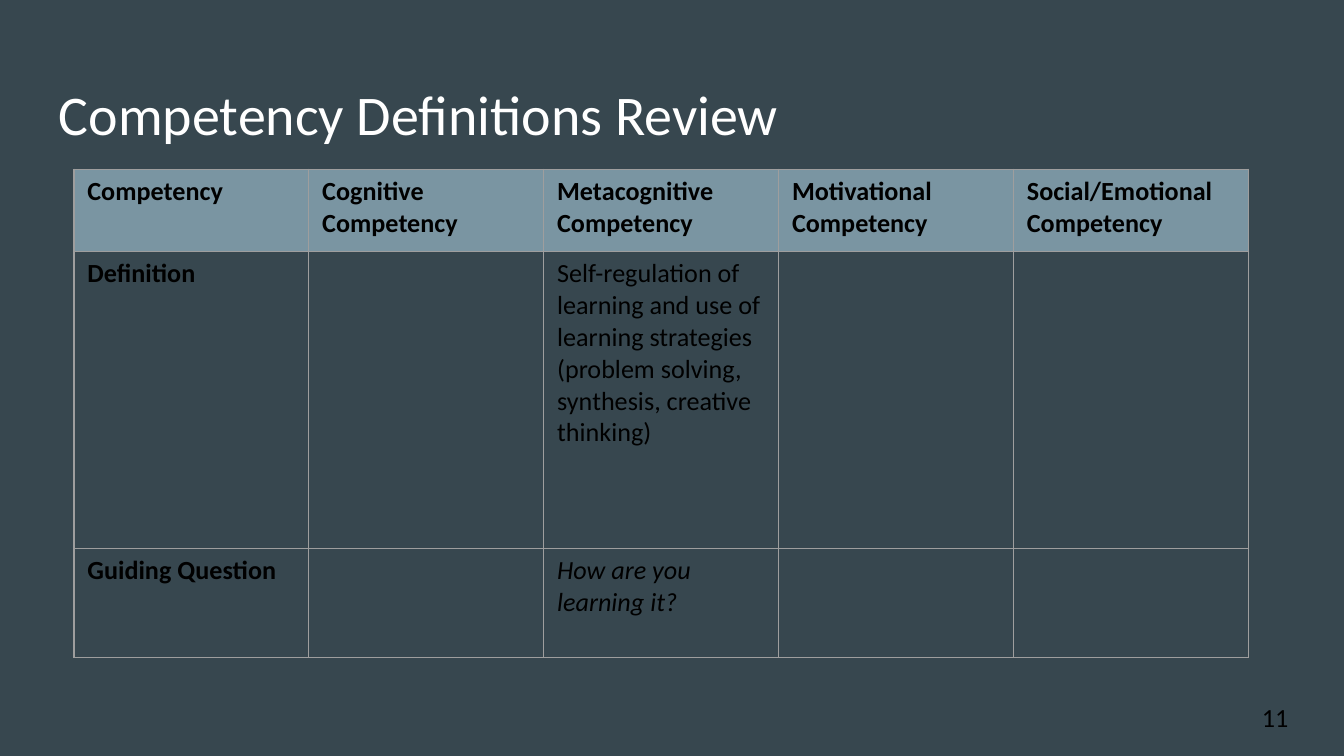
"""Build the competency definitions review slide."""
from dataclasses import dataclass

from lxml import etree
from pptx import Presentation
from pptx.dml.color import RGBColor
from pptx.enum.text import MSO_ANCHOR
from pptx.oxml.ns import qn
from pptx.util import Inches, Pt

TOP, MIDDLE = MSO_ANCHOR.TOP, MSO_ANCHOR.MIDDLE
WIDTH = 10
HEIGHT = WIDTH * 9 / 16
FONT = "Calibri"
COLORS = {
    "background": "37474F",
    "header": "7A95A2",
    "border": "9E9E9E",
    "title": "FFFFFF",
    "text": "000000",
}


@dataclass(frozen=True)
class Box:
    left: float
    top: float
    width: float
    height: float


@dataclass(frozen=True)
class Entry:
    row: int
    col: int
    text: str
    bold: bool = False
    italic: bool = False


TITLE_BOX = Box(0.34, 0.49, 9.32, 0.63)
NUMBER_BOX = Box(9.29, 5.12, 0.6, 0.43)
GRID = Box(0.55, 1.26, 8.74, 3.63)
ROW_HEIGHTS = (0.61, 2.21, 0.81)
HEADERS = (
    "Competency",
    "Cognitive Competency",
    "Metacognitive Competency",
    "Motivational Competency",
    "Social/Emotional Competency",
)
ENTRIES = [Entry(0, col, text, bold=True) for col, text in enumerate(HEADERS)] + [
    Entry(1, 0, "Definition", bold=True),
    Entry(1, 2, "Self-regulation of learning and use of learning strategies "
                "(problem solving, synthesis, creative thinking)"),
    Entry(2, 0, "Guiding Question", bold=True),
    Entry(2, 2, "How are you learning it?", italic=True),
]


def rgb(name: str) -> RGBColor:
    return RGBColor.from_string(COLORS[name])


def write(tf, text: str, *, size: float = 14, color: str = "text",
          bold: bool = False, italic: bool = False) -> None:
    r = tf.paragraphs[0].add_run()
    r.text = text
    r.font.name, r.font.size = FONT, Pt(size)
    r.font.bold, r.font.italic = bold, italic
    r.font.color.rgb = rgb(color)


def add_text(slide, box: Box, text: str, anchor: MSO_ANCHOR, **style) -> None:
    sp = slide.shapes.add_textbox(Inches(box.left), Inches(box.top),
                                  Inches(box.width), Inches(box.height))
    tf = sp.text_frame
    tf.word_wrap = True
    tf.vertical_anchor = anchor
    tf.margin_left = tf.margin_right = tf.margin_top = tf.margin_bottom = Inches(0.1)
    write(tf, text, **style)


def add_borders(cell, color: str, width: float) -> None:
    tc_pr = cell._tc.get_or_add_tcPr()
    for i, side in enumerate(("lnL", "lnR", "lnT", "lnB")):
        ln = etree.Element(qn(f"a:{side}"), w=str(Pt(width)))
        fill = etree.SubElement(ln, qn("a:solidFill"))
        etree.SubElement(fill, qn("a:srgbClr"), val=COLORS[color])
        tc_pr.insert(i, ln)


def add_grid(slide, box: Box, entries: list[Entry]) -> None:
    rows, cols = len(ROW_HEIGHTS), len(HEADERS)
    table = slide.shapes.add_table(rows, cols, Inches(box.left), Inches(box.top),
                                   Inches(box.width), Inches(box.height)).table
    table.first_row = table.horz_banding = False
    for column in table.columns:
        column.width = Inches(box.width / cols)
    for row, height in zip(table.rows, ROW_HEIGHTS):
        row.height = Inches(height)
    for cell in table.iter_cells():
        cell.fill.background()
        add_borders(cell, "border", 0.75)
    for entry in entries:
        cell = table.cell(entry.row, entry.col)
        write(cell.text_frame, entry.text, bold=entry.bold, italic=entry.italic)
        if entry.row == 0:
            cell.fill.solid()
            cell.fill.fore_color.rgb = rgb("header")


def main() -> None:
    prs = Presentation()
    prs.slide_width, prs.slide_height = Inches(WIDTH), Inches(HEIGHT)
    slide = prs.slides.add_slide(prs.slide_layouts[6])
    slide.background.fill.solid()
    slide.background.fill.fore_color.rgb = rgb("background")
    add_text(slide, TITLE_BOX, "Competency Definitions Review", TOP, size=30, color="title")
    add_text(slide, NUMBER_BOX, "11", MIDDLE)
    add_grid(slide, GRID, ENTRIES)
    prs.save("out.pptx")


if __name__ == "__main__":
    main()
